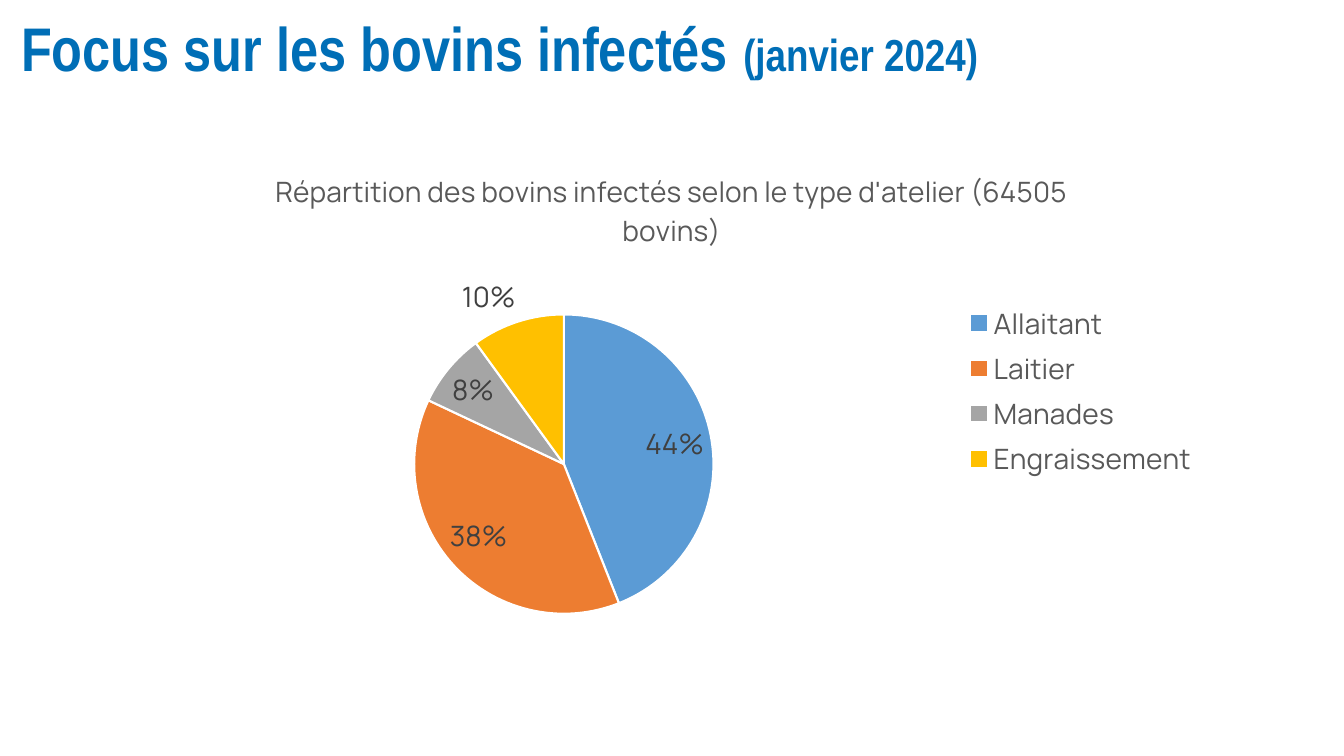
import pptx
import pptx.chart.data
import pptx.dml.color
import pptx.enum.chart
import pptx.enum.text
import pptx.oxml
import pptx.oxml.ns
import pptx.util
from pptx.dml.color import RGBColor
from pptx.util import Cm, Pt

BLUE = RGBColor(0x00, 0x6E, 0xB6)
GREY = RGBColor(0x59, 0x59, 0x59)
DARK_GREY = RGBColor(0x40, 0x40, 0x40)
WHITE = RGBColor(0xFF, 0xFF, 0xFF)

# Type of farm: share of infected cattle (%), slice colour
WORKSHOPS = {
    "Allaitant": (44, RGBColor(0x5B, 0x9B, 0xD5)),
    "Laitier": (38, RGBColor(0xED, 0x7D, 0x31)),
    "Manades": (8, RGBColor(0xA5, 0xA5, 0xA5)),
    "Engraissement": (10, RGBColor(0xFF, 0xC0, 0x00)),
}


class Deck:
    title_font = "Arial Narrow"
    chart_font = "Manrope"
    chart_size = Pt(20)

    def __init__(self):
        self.prs = pptx.Presentation()
        self.prs.slide_width = Cm(33.87)
        self.prs.slide_height = Cm(19.05)
        self.s = self.prs.slides.add_slide(self.prs.slide_layouts[5])

    def title(self, parts, left, top, width, height):
        sp = self.s.shapes.title
        sp.left, sp.top, sp.width, sp.height = left, top, width, height
        tf = sp.text_frame
        tf.word_wrap = True
        tf.auto_size = pptx.enum.text.MSO_AUTO_SIZE.NONE
        tf.vertical_anchor = pptx.enum.text.MSO_ANCHOR.MIDDLE
        p = tf.paragraphs[0]
        p.alignment = pptx.enum.text.PP_ALIGN.LEFT
        p.line_spacing = 0.9
        p.font.name = self.title_font
        p.font.bold = True
        p.font.color.rgb = BLUE
        for text, size in parts:
            r = p.add_run()
            r.text = text
            r.font.size = Pt(size)

    def style(self, font, color):
        font.name = self.chart_font
        font.size = self.chart_size
        font.bold = False
        font.color.rgb = color

    def place(self, element, index, target=None, **fractions):
        """Give a chart part a manual layout, in fractions of the chart."""
        for old in element.findall(pptx.oxml.ns.qn("c:layout")):
            element.remove(old)
        inner = f'<c:layoutTarget val="{target}"/>' if target else ""
        inner += "".join(f'<c:{k}Mode val="edge"/>' for k in "xy")
        inner += "".join(f'<c:{k} val="{v}"/>' for k, v in fractions.items())
        element.insert(index, pptx.oxml.parse_xml(
            f'<c:layout {pptx.oxml.ns.nsdecls("c")}><c:manualLayout>'
            f"{inner}</c:manualLayout></c:layout>"))

    def pie(self, heading, slices, left, top, width, height):
        data = pptx.chart.data.CategoryChartData()
        data.categories = list(slices)
        data.add_series("Series 1", [value for value, _ in slices.values()])
        chart = self.s.shapes.add_chart(
            pptx.enum.chart.XL_CHART_TYPE.PIE, left, top, width, height, data).chart
        self.style(chart.font, GREY)

        # Heading
        chart.has_title = True
        p = chart.chart_title.text_frame.paragraphs[0]
        p.text = heading
        self.style(p.font, GREY)

        # Slices
        plot = chart.plots[0]
        plot.vary_by_categories = True
        for i, (_, color) in enumerate(slices.values()):
            point = plot.series[0].points[i]
            point.format.fill.solid()
            point.format.fill.fore_color.rgb = color
            point.format.line.color.rgb = WHITE
            point.format.line.width = Pt(1.5)
        plot_area = chart._chartSpace.chart.plotArea
        self.place(plot_area, 0, "inner", x=0.26, y=0.345, w=0.28, h=0.625)

        # Percentages
        plot.has_data_labels = True
        labels = plot.data_labels
        labels.show_percentage = True
        labels.show_value = False
        labels.number_format = "0%"
        labels.number_format_is_linked = False
        labels.position = pptx.enum.chart.XL_LABEL_POSITION.BEST_FIT
        self.style(labels.font, DARK_GREY)

        # Legend
        chart.has_legend = True
        legend = chart.legend
        legend.position = pptx.enum.chart.XL_LEGEND_POSITION.RIGHT
        legend.include_in_layout = False
        self.style(legend.font, GREY)
        self.place(legend._element, 1, x=0.77, y=0.31, w=0.22, h=0.39)


def main():
    deck = Deck()
    deck.title([("Focus sur les bovins infectés ", 44), ("(janvier 2024)", 32)],
               Cm(0.28), Cm(0.46), Cm(29.21), Cm(1.68))
    deck.pie("Répartition des bovins infectés selon le type d'atelier (64505 bovins)",
             WORKSHOPS, Cm(3.35), Cm(3.76), Cm(27.15), Cm(12.07))
    deck.prs.save("out.pptx")


if __name__ == "__main__":
    main()
